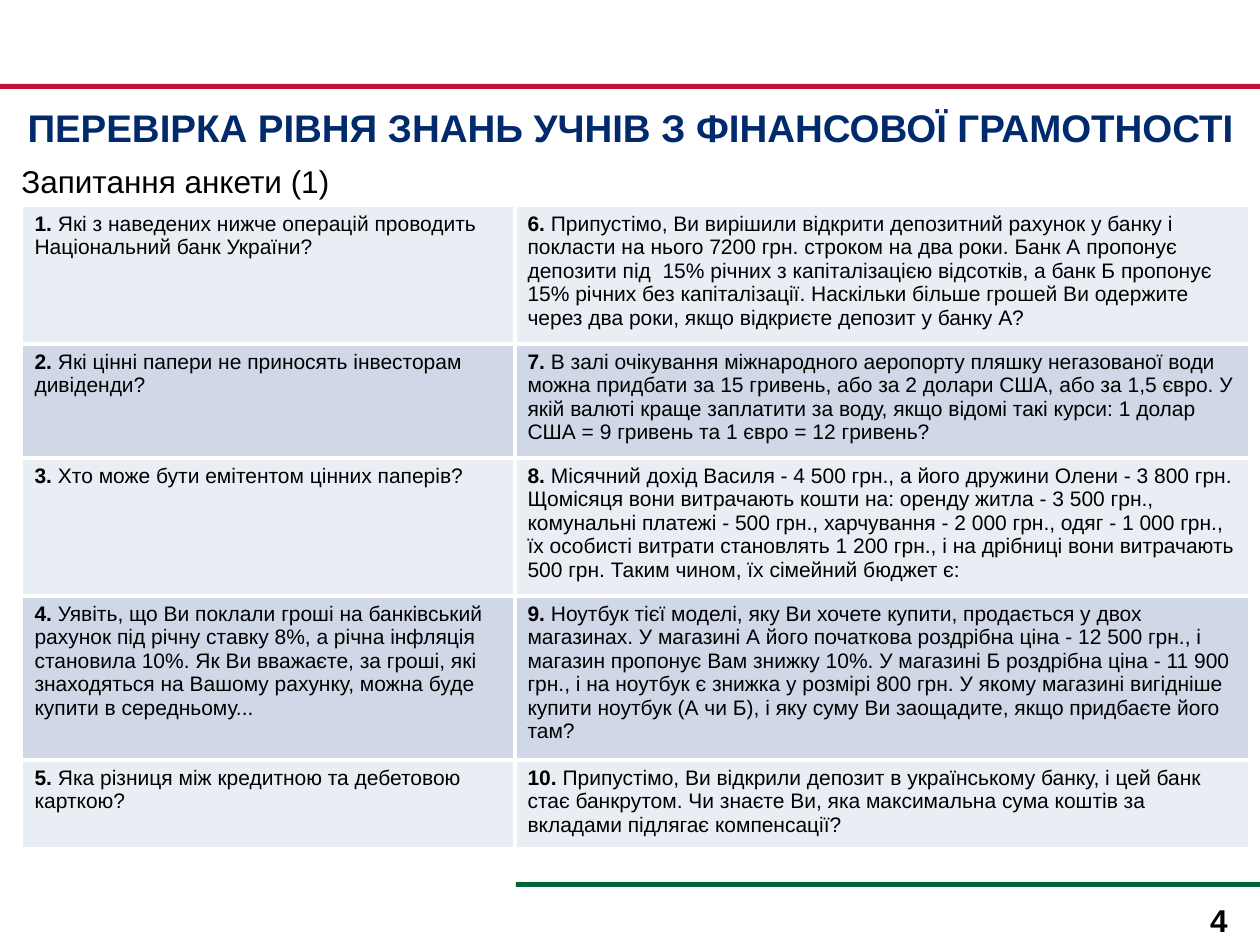
import pptx
import pptx.dml.color
import pptx.enum.shapes
import pptx.enum.text
import pptx.oxml
import pptx.oxml.ns
import pptx.util

# Content
TITLE = "ПЕРЕВІРКА РІВНЯ ЗНАНЬ УЧНІВ З ФІНАНСОВОЇ ГРАМОТНОСТІ"
SUBTITLE = "Запитання анкети (1)"
PAGE_NUMBER = "4"
QUESTIONS = [
    "Які з наведених нижче операцій проводить Національний банк України?",
    "Які цінні папери не приносять інвесторам дивіденди?",
    "Хто може бути емітентом цінних паперів?",
    "Уявіть, що Ви поклали гроші на банківський рахунок під річну ставку 8%, "
    "а річна інфляція становила 10%. Як Ви вважаєте, за гроші, які знаходяться "
    "на Вашому рахунку, можна буде купити в середньому...",
    "Яка різниця між кредитною та дебетовою карткою?",
    "Припустімо, Ви вирішили відкрити депозитний рахунок у банку і покласти на "
    "нього 7200 грн. строком на два роки. Банк А пропонує депозити під  15% річних "
    "з капіталізацією відсотків, а банк Б пропонує 15% річних без капіталізації. "
    "Наскільки більше грошей Ви одержите через два роки, якщо відкриєте депозит "
    "у банку А?",
    "В залі очікування міжнародного аеропорту пляшку негазованої води можна "
    "придбати за 15 гривень, або за 2 долари США, або за 1,5 євро. У якій валюті "
    "краще заплатити за воду, якщо відомі такі курси: 1 долар США = 9 гривень та "
    "1 євро = 12 гривень?",
    "Місячний дохід Василя - 4 500 грн., а його дружини Олени - 3 800 грн. "
    "Щомісяця вони витрачають кошти на: оренду житла - 3 500 грн., комунальні "
    "платежі - 500 грн., харчування - 2 000 грн., одяг - 1 000 грн., їх особисті "
    "витрати становлять 1 200 грн., і на дрібниці вони витрачають 500 грн. "
    "Таким чином, їх сімейний бюджет є:",
    "Ноутбук тієї моделі, яку Ви хочете купити, продається у двох магазинах. "
    "У магазині А його початкова роздрібна ціна - 12 500 грн., і магазин пропонує "
    "Вам знижку 10%. У магазині Б роздрібна ціна - 11 900 грн., і на ноутбук є "
    "знижка у розмірі 800 грн. У якому магазині вигідніше купити ноутбук (А чи Б), "
    "і яку суму Ви заощадите, якщо придбаєте його там?",
    "Припустімо, Ви відкрили депозит в українському банку, і цей банк стає "
    "банкрутом. Чи знаєте Ви, яка максимальна сума коштів за вкладами підлягає "
    "компенсації?",
]

# Layout in px
SCALE = 914400 // 126
SLIDE_SIZE = (1260, 945)
BARS = [((0, 84, 1260, 5), "C2113A"), ((516, 882, 744, 5), "006633")]
TABLE_LEFT, TABLE_TOP = 22, 206
COLUMN_WIDTHS = [493, 734]
ROW_HEIGHTS = [138, 114, 138, 164, 88]
ROW_FILLS = ["E9EDF4", "D0D8E8"]
INNER_BORDER, OUTER_BORDER = 2.25, 1

ALIGN = pptx.enum.text.PP_ALIGN
TEXTS = [
    (TITLE, (0, 98, 1261, 73), ALIGN.CENTER, {"size": 22, "bold": True, "color": "002A6C"}),
    (SUBTITLE, (9, 156, 1033, 50), ALIGN.LEFT, {"size": 18}),
    (PAGE_NUMBER, (1176, 895, 64, 42), ALIGN.RIGHT, {"size": 18, "bold": True}),
]


def px(value):
    return pptx.util.Emu(value * SCALE)


def color(value):
    return pptx.dml.color.RGBColor.from_string(value)


def add_run(paragraph, text, size, bold=False, color_hex="000000"):
    run = paragraph.add_run()
    run.text = text
    values = {"name": "Arial", "size": pptx.util.Pt(size), "bold": bold}
    for name, value in values.items():
        setattr(run.font, name, value)
    run.font.color.rgb = color(color_hex)


def fill_solid(target, value):
    target.fill.solid()
    target.fill.fore_color.rgb = color(value)


def set_borders(cell, widths):
    properties = cell._tc.get_or_add_tcPr()
    for index, (side, width) in enumerate(widths.items()):
        line = pptx.oxml.parse_xml(
            f'<a:ln{side} {pptx.oxml.ns.nsdecls("a")} w="{int(pptx.util.Pt(width))}">'
            '<a:solidFill><a:srgbClr val="FFFFFF"/></a:solidFill>'
            f'</a:ln{side}>'
        )
        properties.insert(index, line)


def add_bars(slide):
    for box, fill in BARS:
        shape = slide.shapes.add_shape(
            pptx.enum.shapes.MSO_SHAPE.RECTANGLE, *map(px, box))
        shape.shadow.inherit = False
        fill_solid(shape, fill)
        shape.line.fill.background()


def add_texts(slide):
    for text, box, alignment, style in TEXTS:
        frame = slide.shapes.add_textbox(*map(px, box)).text_frame
        frame.word_wrap = True
        paragraph = frame.paragraphs[0]
        paragraph.alignment = alignment
        add_run(paragraph, text, style["size"], style.get("bold", False),
                style.get("color", "000000"))


def add_questions(slide):
    row_count, column_count = len(ROW_HEIGHTS), len(COLUMN_WIDTHS)
    table = slide.shapes.add_table(
        row_count, column_count, px(TABLE_LEFT), px(TABLE_TOP),
        px(sum(COLUMN_WIDTHS)), px(sum(ROW_HEIGHTS))).table
    for column, width in zip(table.columns, COLUMN_WIDTHS):
        column.width = px(width)
    for row, height in zip(table.rows, ROW_HEIGHTS):
        row.height = px(height)

    # Questions run down the first column, then down the second
    for index, question in enumerate(QUESTIONS):
        column, row = divmod(index, row_count)
        cell = table.cell(row, column)
        paragraph = cell.text_frame.paragraphs[0]
        add_run(paragraph, f"{index + 1}. ", 12, bold=True)
        add_run(paragraph, question, 12)
        fill_solid(cell, ROW_FILLS[row % 2])
        on_edge = {"L": column == 0, "R": column == column_count - 1,
                   "T": row == 0, "B": row == row_count - 1}
        set_borders(cell, {side: OUTER_BORDER if edge else INNER_BORDER
                           for side, edge in on_edge.items()})


def main():
    presentation = pptx.Presentation()
    presentation.slide_width, presentation.slide_height = map(px, SLIDE_SIZE)
    slide = presentation.slides.add_slide(presentation.slide_layouts[6])
    add_bars(slide)
    add_questions(slide)
    add_texts(slide)
    presentation.save("out.pptx")


if __name__ == "__main__":
    main()
